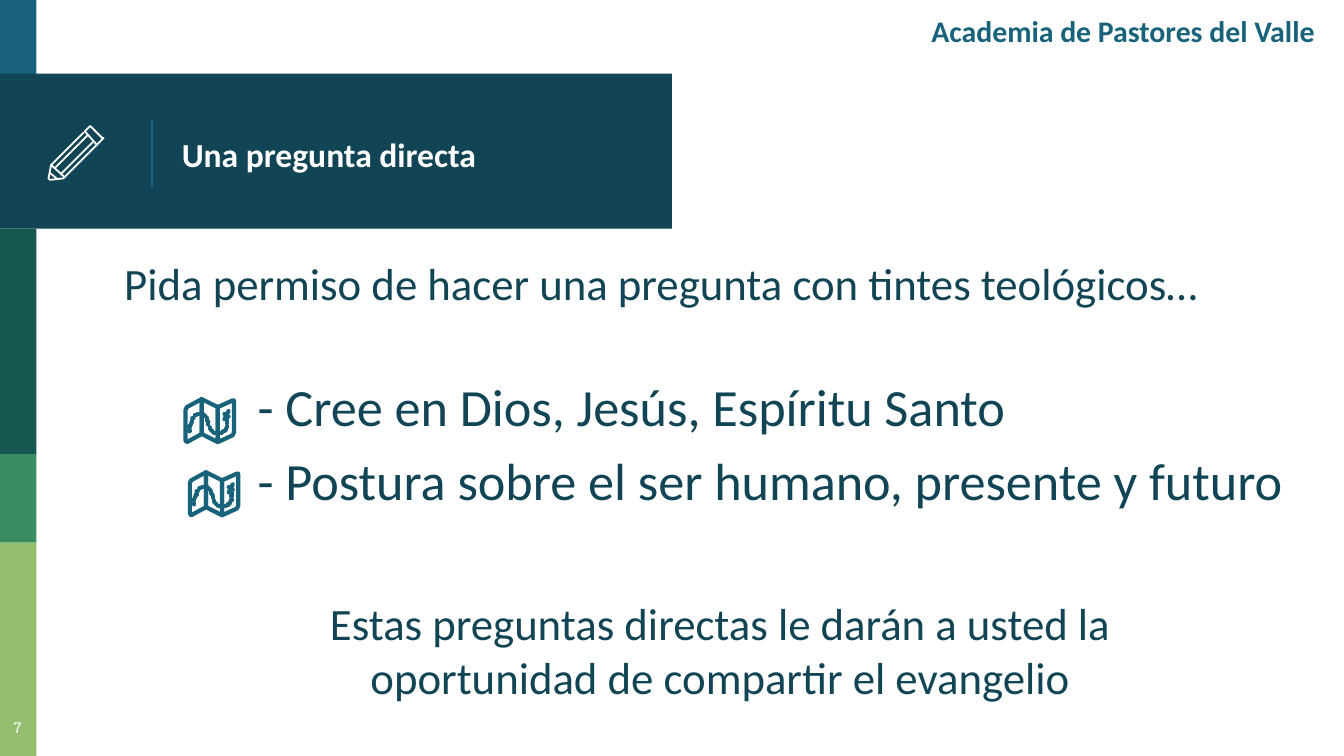
from lxml import etree
from pptx import Presentation
from pptx import util as u
from pptx.dml import color
from pptx.enum import shapes, text
from pptx.oxml import ns

WHITE, NAVY, TEAL = "FFFFFF", "114454", "18637B"
LEFT, CENTER, RIGHT = text.PP_ALIGN.LEFT, text.PP_ALIGN.CENTER, text.PP_ALIGN.RIGHT
TOP, MIDDLE = text.MSO_ANCHOR.TOP, text.MSO_ANCHOR.MIDDLE

SIDEBAR = [
    (0, 0, 19.5, 42, TEAL),
    (0, 39.5, 360, 83, NAVY),
    (0, 122.5, 19.5, 121, "165751"),
    (0, 243.3, 19.5, 47.5, "3B8D61"),
    (0, 290.8, 19.5, 114.2, "94BF6E"),
]

PENCIL = [
    ([(40, 9), (32, 1), (31, 0), (30, 1), (27, 4), (36, 14), (40, 10), (41, 9)], True),
    ([(33, 12), (9, 36)], False),
    ([(26, 5), (2, 29), (0, 39), (1, 40), (2, 40), (11, 39), (12, 38), (36, 14)], False),
    ([(5, 31), (29, 7)], False),
    ([(6, 39), (1, 35)], False),
    ([(2, 29), (12, 38)], False),
]

MAP_FOLDS = [
    ([(24, 6), (12, 0), (12, 26), (24, 32)], True),
    ([(12, 0), (1, 6), (0, 8), (0, 31), (1, 32), (12, 26)], True),
    ([(35, 1), (24, 6), (24, 32), (35, 27), (36, 25), (36, 1)], True),
    ([(29, 11), (32, 13)], False),
    ([(32, 9), (29, 15)], False),
]
ROUTE = [
    (3, 23), (3, 24), (3, 21), (3, 20), (4, 19), (4, 18), (5, 17), (5, 16),
    (5, 14), (6, 14), (7, 12), (8, 12), (9, 11), (10, 11), (12, 11), (13, 11),
    (14, 12), (15, 13), (16, 14), (16, 15), (16, 16), (17, 17), (17, 18), (17, 19),
    (18, 21), (18, 22), (19, 23), (20, 24), (21, 25), (22, 25), (23, 25), (24, 25),
    (26, 25), (27, 25), (28, 24), (29, 24), (30, 23), (30, 22), (31, 21), (31, 20),
    (31, 18), (31, 17), (31, 15), (31, 16),
]
MAP = MAP_FOLDS + [(dash, False) for dash in zip(ROUTE[::2], ROUTE[1::2])]


def rgb(code):
    return color.RGBColor.from_string(code)


class Deck:
    """Holds the style and the current slide, and draws each kind of element."""

    font = "Calibri"
    inset = 7.2
    icon_unit = u.Pt(0.72)

    def __init__(self, width, height):
        self.file = Presentation()
        self.file.slide_width, self.file.slide_height = u.Pt(width), u.Pt(height)
        self.slide = self.file.slides.add_slide(self.file.slide_layouts[6])

    def block(self, left, top, width, height, fill):
        block = self.slide.shapes.add_shape(
            shapes.MSO_SHAPE.RECTANGLE, *map(u.Pt, (left, top, width, height)))
        block.shadow.inherit = False
        block.fill.solid()
        block.fill.fore_color.rgb = rgb(fill)
        block.line.fill.background()

    def rule(self, x1, y1, x2, y2, ink, weight):
        rule = self.slide.shapes.add_connector(
            shapes.MSO_CONNECTOR.STRAIGHT, *map(u.Pt, (x1, y1, x2, y2)))
        rule.line.color.rgb = rgb(ink)
        rule.line.width = u.Pt(weight)
        etree.SubElement(rule._element.spPr, ns.qn("a:effectLst"))

    def icon(self, left, top, strokes, ink, weight):
        icon = self.slide.shapes.add_group_shape()
        for points, closed in strokes:
            outline = icon.shapes.build_freeform(*points[0], scale=self.icon_unit)
            outline.add_line_segments(points[1:], close=closed)
            stroke = outline.convert_to_shape(u.Pt(left), u.Pt(top))
            stroke.shadow.inherit = False
            stroke.fill.background()
            stroke.line.color.rgb = rgb(ink)
            stroke.line.width = u.Pt(weight)
            pen = stroke._element.spPr.find(ns.qn("a:ln"))
            pen.set("cap", "rnd")
            etree.SubElement(pen, ns.qn("a:round"))

    def words(self, left, top, width, height, lines, ink, bold=False, font=None,
              anchor=TOP, head=None):
        frame = self.slide.shapes.add_textbox(
            *map(u.Pt, (left, top, width, height))).text_frame
        frame.word_wrap = True
        frame.vertical_anchor = anchor
        frame.margin_left = frame.margin_right = frame.margin_bottom = u.Pt(self.inset)
        frame.margin_top = u.Pt(self.inset if head is None else head)
        for number, (wording, size, align, before, indent) in enumerate(lines):
            line = frame.add_paragraph() if number else frame.paragraphs[0]
            line.text = wording
            line.alignment = align
            line.space_before = u.Pt(before)
            line._p.get_or_add_pPr().set("marL", str(u.Pt(indent)))
            line.font.name = font or self.font
            line.font.size = u.Pt(size)
            line.font.bold = bold
            line.font.color.rgb = rgb(ink)

    def save(self):
        self.file.save("out.pptx")


def main():
    deck = Deck(720, 405)
    for band in SIDEBAR:
        deck.block(*band)
    deck.rule(81.5, 64, 81.5, 100.5, TEAL, 0.75)
    deck.words(90.3, 42.3, 270, 80.5, [("Una pregunta directa", 18, LEFT, 0, 0)],
               WHITE, bold=True, anchor=MIDDLE)
    deck.words(55.5, 130, 656.5, 248.5, [
        ("Pida permiso de hacer una pregunta con tintes teológicos…", 24, LEFT, 0, 4),
        ("- Cree en Dios, Jesús, Espíritu Santo", 28, LEFT, 34.5, 75.5),
        ("- Postura sobre el ser humano, presente y futuro", 28, LEFT, 6, 75.5),
        ("Estas preguntas directas le darán a usted la\n"
         "oportunidad de compartir el evangelio", 24, CENTER, 45.5, 4),
    ], NAVY)
    deck.icon(26, 67.5, PENCIL, WHITE, 0.96)
    deck.words(-4, 379.5, 27, 25, [("7", 8, CENTER, 0, 0)], WHITE,
               font="Roboto Slab", head=9)
    deck.words(445, 4.5, 266.5, 44, [("Academia de Pastores del Valle", 16, RIGHT, 0, 0)],
               TEAL, bold=True, head=2.5)
    for left, top in ((99.4, 213.8), (101.7, 253)):
        deck.icon(left, top, MAP, TEAL, 2.25)
    deck.save()


if __name__ == "__main__":
    main()
